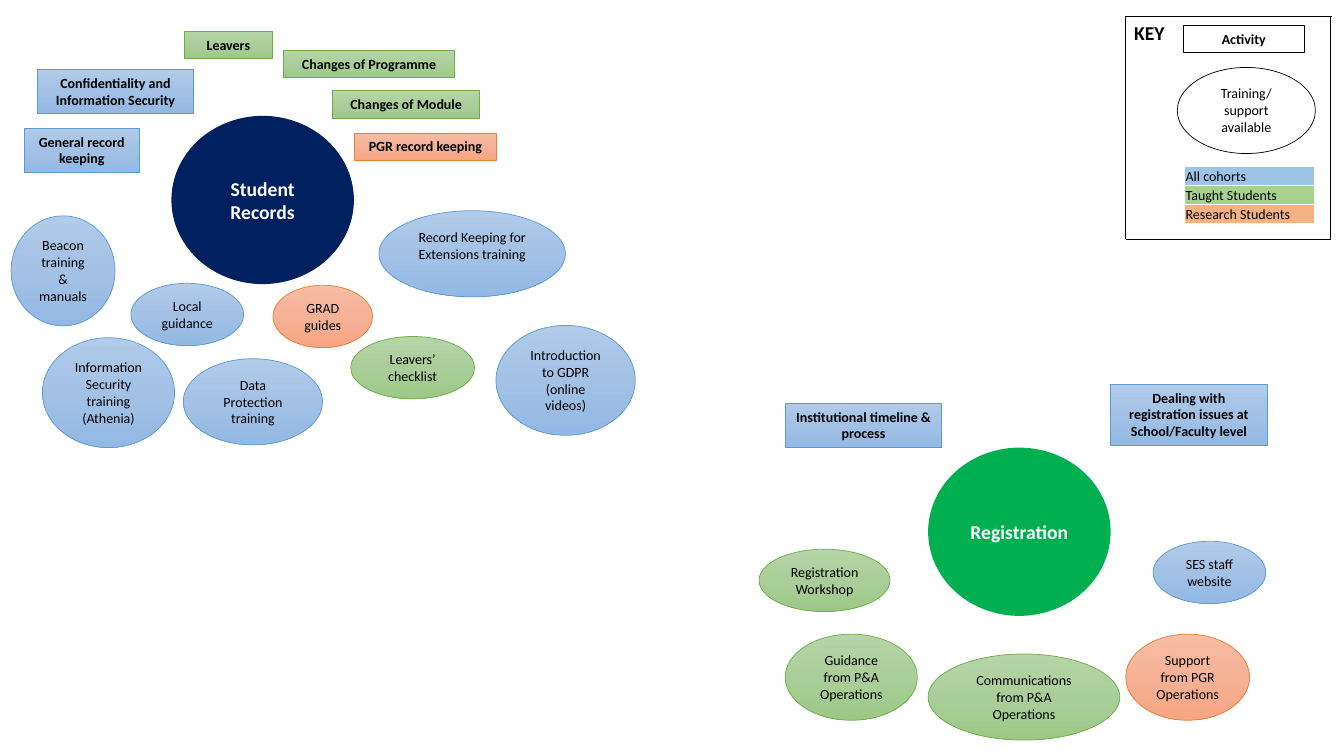
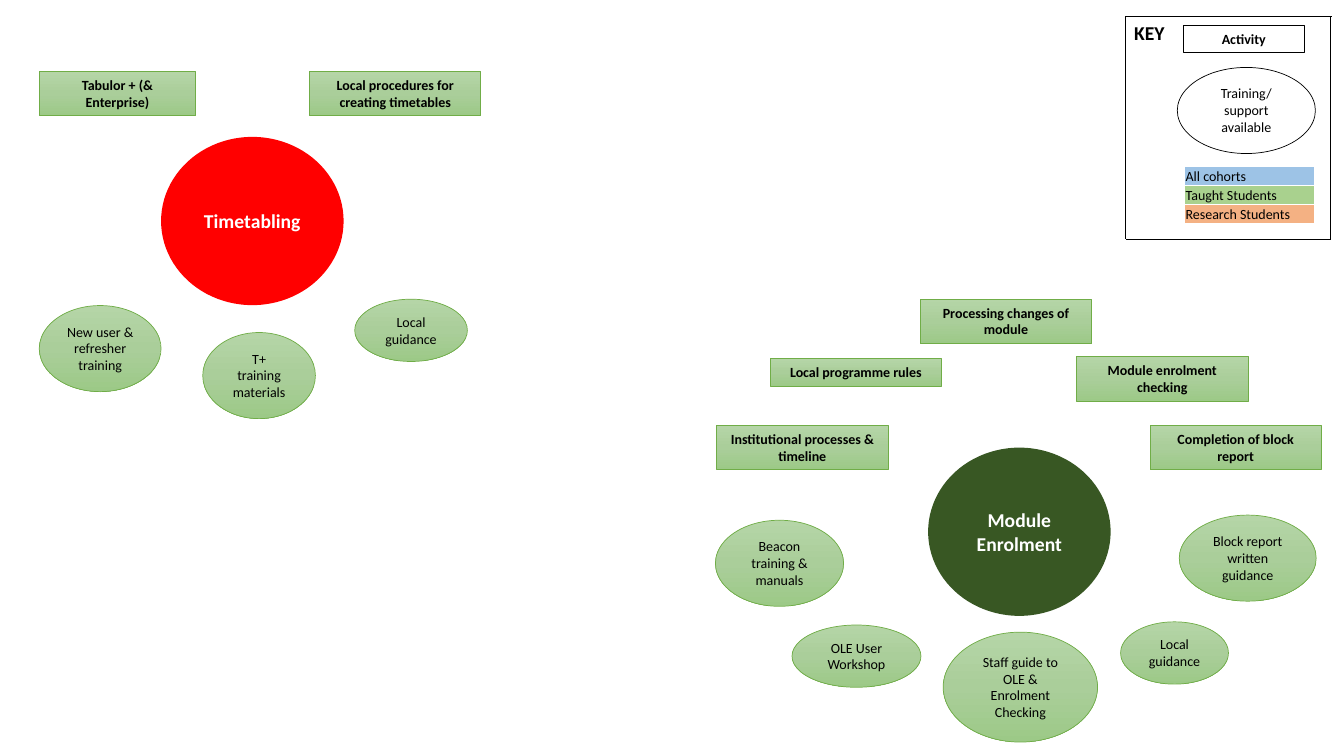
from itertools import pairwise

from pptx import Presentation
from pptx import util as u
from pptx.dml.color import RGBColor
from pptx.enum import shapes, text
from pptx.oxml import parse_xml
from pptx.oxml.ns import nsdecls

FONT = "Calibri"
BLACK = RGBColor(0x00, 0x00, 0x00)
WHITE = RGBColor(0xFF, 0xFF, 0xFF)
NAVY = RGBColor(0x00, 0x20, 0x60)
EMERALD = RGBColor(0x00, 0xB0, 0x50)
RED = RGBColor(0xFF, 0x00, 0x00)
FOREST = RGBColor(0x38, 0x57, 0x23)
BLUE_LINE = RGBColor(0x5B, 0x9B, 0xD5)
GREEN_LINE = RGBColor(0x70, 0xAD, 0x47)
ORANGE_LINE = RGBColor(0xED, 0x7D, 0x31)
BLUE_STOPS = [RGBColor(0xB1, 0xCB, 0xE9), RGBColor(0xA3, 0xC1, 0xE5), RGBColor(0x93, 0xB9, 0xE4)]
GREEN_STOPS = [RGBColor(0xB5, 0xD5, 0xA7), RGBColor(0xAA, 0xCE, 0x9A), RGBColor(0x9C, 0xC9, 0x87)]
ORANGE_STOPS = [RGBColor(0xF7, 0xBD, 0xA5), RGBColor(0xF5, 0xB1, 0x96), RGBColor(0xF8, 0xA5, 0x82)]

ALL = (BLUE_LINE, BLUE_STOPS)
TAUGHT = (GREEN_LINE, GREEN_STOPS)
RESEARCH = (ORANGE_LINE, ORANGE_STOPS)
PLAIN = (BLACK, None)

KEY_ROWS = [
    ("All cohorts", RGBColor(0x9D, 0xC3, 0xE6)),
    ("Taught Students", RGBColor(0xA9, 0xD1, 0x8E)),
    ("Research Students", RGBColor(0xF4, 0xB1, 0x83)),
]

RECORDS_ACTIVITIES = [
    ("Leavers", TAUGHT, 4.65, 0.79, 2.21, 1),
    ("Changes of Programme", TAUGHT, 7.14, 1.27, 4.32, 1),
    ("Changes of Module", TAUGHT, 8.38, 2.29, 3.71, 1),
    ("PGR record keeping", RESEARCH, 8.94, 3.35, 3.56, 1),
    ("Confidentiality and Information Security", ALL, 0.94, 1.75, 3.94, 2),
    ("General record keeping", ALL, 0.61, 3.23, 2.9, 2),
]
RECORDS_SUPPORT = [
    ("Beacon training & manuals", ALL, 0.28, 5.44, 2.62, 4),
    ("Data Protection training", ALL, 4.62, 9.04, 3.51, 3),
    ("Information Security training (Athenia)", ALL, 1.07, 8.51, 3.33, 4),
    ("Leavers’ checklist", TAUGHT, 8.84, 8.48, 3.12, 2),
    ("Local guidance", ALL, 3.3, 7.14, 2.84, 2),
    ("GRAD guides", RESEARCH, 6.88, 7.19, 2.51, 2),
    ("Record Keeping for Extensions training", ALL, 9.55, 5.31, 4.7, 3),
    ("Introduction to GDPR (online videos)", ALL, 12.5, 8.2, 3.51, 4),
]
REGISTRATION_ACTIVITIES = [
    ("Institutional timeline & process", ALL, 19.79, 10.16, 3.94, 2),
    ("Dealing with registration issues at School/Faculty level", ALL, 27.99, 9.68, 3.94, 3),
]
REGISTRATION_SUPPORT = [
    ("Registration Workshop", TAUGHT, 19.13, 13.84, 3.3, 2),
    ("Communications from P&A Operations", TAUGHT, 23.39, 16.48, 4.83, 3),
    ("Guidance from P&A Operations", TAUGHT, 19.79, 15.98, 3.33, 3),
    ("Support from PGR Operations", RESEARCH, 28.37, 15.98, 3.12, 3),
    ("SES staff website", ALL, 29.06, 13.64, 2.84, 2),
]
TIMETABLING_ACTIVITIES = [
    ("Tabulor + (& Enterprise)", TAUGHT, 0.99, 1.8, 3.94, 2),
    ("Local procedures for creating timetables", TAUGHT, 7.8, 1.8, 4.32, 2),
]
TIMETABLING_SUPPORT = [
    ("New user & refresher training", TAUGHT, 0.99, 7.7, 3.07, 3),
    ("T+ training materials", TAUGHT, 5.11, 8.38, 2.84, 3),
    ("Local guidance", TAUGHT, 8.94, 7.54, 2.84, 2),
]
ENROLMENT_ACTIVITIES = [
    ("Institutional processes & timeline", TAUGHT, 18.06, 10.72, 4.32, 2),
    ("Local programme rules", TAUGHT, 19.41, 9.04, 4.32, 1),
    ("Processing changes of module", TAUGHT, 23.19, 7.54, 4.32, 2),
    ("Module enrolment checking", TAUGHT, 27.13, 8.99, 4.32, 2),
    ("Completion of block report", TAUGHT, 28.98, 10.72, 4.32, 2),
]
ENROLMENT_SUPPORT = [
    ("Beacon training & manuals", TAUGHT, 18.03, 13.11, 3.23, 3),
    ("OLE User Workshop", TAUGHT, 19.96, 15.75, 3.25, 2),
    ("Staff guide to OLE & Enrolment Checking", TAUGHT, 23.77, 15.93, 3.89, 4),
    ("Local guidance", TAUGHT, 28.24, 15.67, 2.72, 2),
    ("Block report written guidance", TAUGHT, 29.72, 12.98, 3.45, 3),
]

SLIDES = [
    [
        ("Student Records", NAVY, 4.32, 2.92, RECORDS_ACTIVITIES, RECORDS_SUPPORT),
        ("Registration", EMERALD, 23.39, 11.28, REGISTRATION_ACTIVITIES, REGISTRATION_SUPPORT),
    ],
    [
        ("Timetabling", RED, 4.06, 3.45, TIMETABLING_ACTIVITIES, TIMETABLING_SUPPORT),
        ("Module Enrolment", FOREST, 23.39, 11.28, ENROLMENT_ACTIVITIES, ENROLMENT_SUPPORT),
    ],
]


def write(tf, words, size=10, bold=False, color=BLACK, align=text.PP_ALIGN.CENTER):
    tf.word_wrap = True
    p = tf.paragraphs[0]
    p.alignment = align
    r = p.add_run()
    r.text = words
    r.font.name = FONT
    r.font.size = u.Pt(size)
    r.font.bold = bold
    r.font.color.rgb = color


def fill_gradient(sp, stops):
    marks = "".join(
        f'<a:gs pos="{i * 50000}"><a:srgbClr val="{color}"/></a:gs>'
        for i, color in enumerate(stops)
    )
    grad = parse_xml(
        f'<a:gradFill {nsdecls("a")} rotWithShape="1"><a:gsLst>{marks}</a:gsLst>'
        '<a:lin ang="5400000" scaled="0"/></a:gradFill>'
    )
    sp._element.spPr.insert(2, grad)


def add_node(s, kind, words, cohort, x, y, w, h, bold):
    line, stops = cohort
    sp = s.shapes.add_shape(kind, u.Cm(x), u.Cm(y), u.Cm(w), u.Cm(h))
    sp.shadow.inherit = False
    if stops:
        fill_gradient(sp, stops)
    else:
        sp.fill.background()
    sp.line.color.rgb = line
    sp.line.width = u.Pt(0.5)
    sp.text_frame.vertical_anchor = text.MSO_ANCHOR.TOP
    write(sp.text_frame, words, bold=bold)
    return sp


def add_activity(s, words, cohort, x, y, w, lines):
    h = 0.69 + 0.43 * (lines - 1)
    return add_node(s, shapes.MSO_SHAPE.RECTANGLE, words, cohort, x, y, w, h, True)


def add_support(s, words, cohort, x, y, w, lines):
    h = 1.57 + 0.6 * (lines - 2)
    return add_node(s, shapes.MSO_SHAPE.OVAL, words, cohort, x, y, w, h, False)


def add_hub(s, words, color, x, y):
    sp = s.shapes.add_shape(shapes.MSO_SHAPE.OVAL, u.Cm(x), u.Cm(y), u.Cm(4.6), u.Cm(4.24))
    sp.shadow.inherit = False
    sp.fill.solid()
    sp.fill.fore_color.rgb = color
    sp.line.fill.background()
    sp.text_frame.vertical_anchor = text.MSO_ANCHOR.MIDDLE
    write(sp.text_frame, words, 14, True, WHITE)


def add_line(s, start, end):
    c = s.shapes.add_connector(
        shapes.MSO_CONNECTOR.STRAIGHT, *(u.Cm(v) for v in (*start, *end))
    )
    c.line.color.rgb = BLACK
    c.line.width = u.Pt(0.5)
    c._element.spPr.append(parse_xml(f'<a:effectLst {nsdecls("a")}/>'))


def add_cohort_table(s, x, y, w, row_h):
    table = s.shapes.add_table(
        len(KEY_ROWS), 1, u.Cm(x), u.Cm(y), u.Cm(w), u.Cm(row_h * len(KEY_ROWS))
    ).table
    table.first_row = False
    table.horz_banding = False
    for i, (words, color) in enumerate(KEY_ROWS):
        cell = table.cell(i, 0)
        cell.margin_left = cell.margin_right = cell.margin_top = u.Cm(0.03)
        cell.margin_bottom = 0
        cell.vertical_anchor = text.MSO_ANCHOR.BOTTOM
        write(cell.text_frame, words, align=text.PP_ALIGN.LEFT)
        for side in "LRTB":
            cell._tc.get_or_add_tcPr().append(parse_xml(
                f'<a:ln{side} {nsdecls("a")} w="12700"><a:solidFill>'
                f'<a:srgbClr val="{WHITE}"/></a:solidFill></a:ln{side}>'
            ))
        cell.fill.solid()
        cell.fill.fore_color.rgb = color


def add_key(s):
    left, top, right, bottom = 28.37, 0.41, 33.53, 6.02
    tb = s.shapes.add_textbox(u.Cm(27.97), u.Cm(top), u.Cm(1.63), u.Cm(0.86))
    write(tb.text_frame, "KEY", 14, True, align=text.PP_ALIGN.RIGHT)
    activity = add_activity(s, "Activity", PLAIN, 29.82, 0.64, 3.05, 1)
    activity.line.width = u.Pt(0.75)
    add_support(s, "Training/ support available", PLAIN, 29.67, 1.7, 3.48, 3)
    add_cohort_table(s, 29.85, 4.19, 3.28, 0.48)
    corners = [(right, top), (right, bottom), (left, bottom), (left, top), (right + 0.05, top)]
    for start, end in pairwise(corners):
        add_line(s, start, end)


def add_cluster(s, title, color, x, y, activities, support):
    add_hub(s, title, color, x, y)
    for item in activities:
        add_activity(s, *item)
    for item in support:
        add_support(s, *item)


def main():
    prs = Presentation()
    prs.slide_width = u.Cm(33.87)
    prs.slide_height = u.Cm(19.05)
    for clusters in SLIDES:
        s = prs.slides.add_slide(prs.slide_layouts[6])
        for cluster in clusters:
            add_cluster(s, *cluster)
        add_key(s)
    prs.save("out.pptx")


if __name__ == "__main__":
    main()
